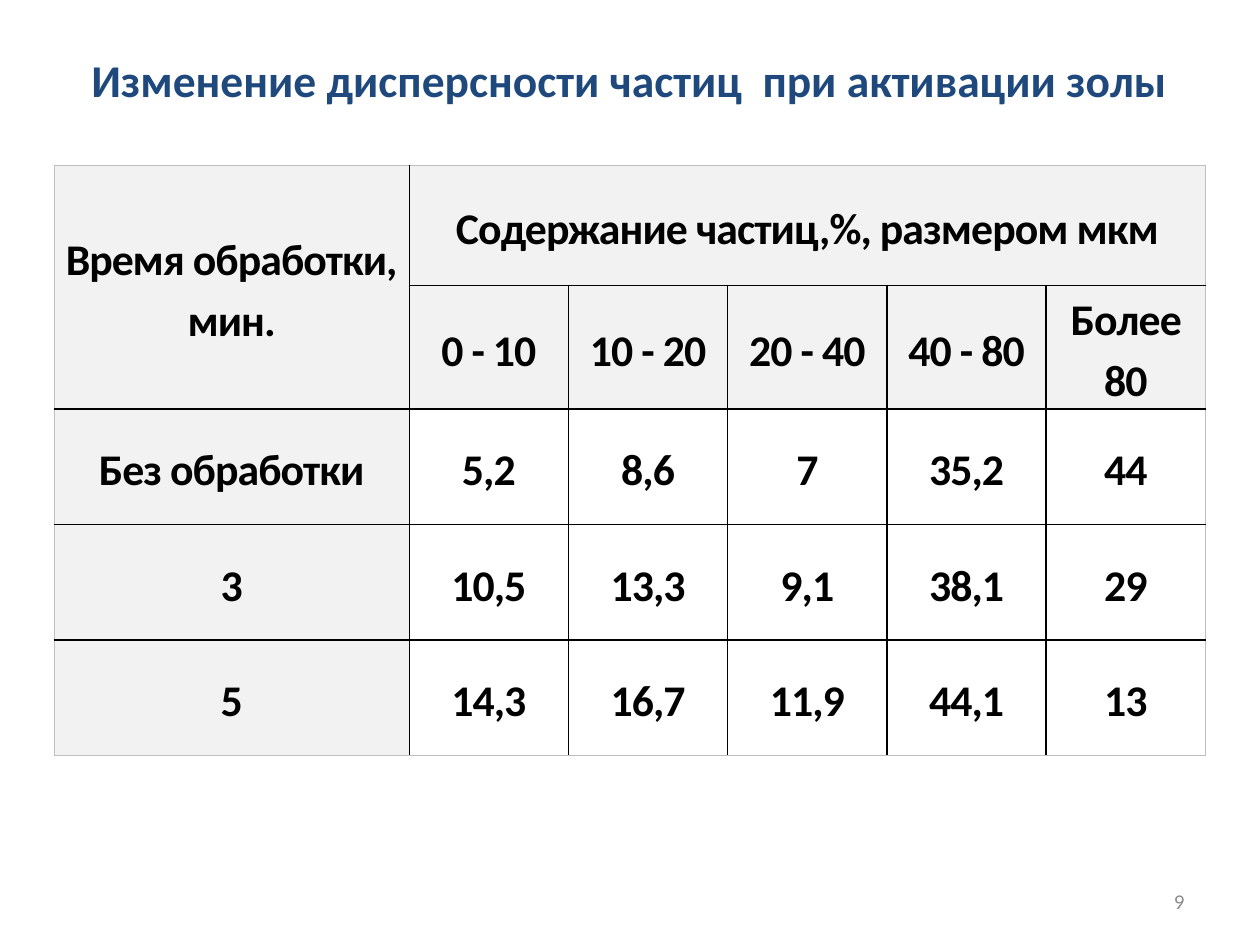
import pptx
import pptx.dml.color
import pptx.enum.text
import pptx.oxml
import pptx.oxml.ns
import pptx.util
from pptx.util import Cm

ALIGN = pptx.enum.text.PP_ALIGN
MIDDLE = pptx.enum.text.MSO_ANCHOR.MIDDLE


def colour(value):
    return pptx.dml.color.RGBColor.from_string(value)


def format_text(frame, size, hex_colour, bold, align):
    for para in frame.paragraphs:
        para.alignment = align
        for span in para.runs:
            span.font.name = "Calibri"
            span.font.size = pptx.util.Pt(size)
            span.font.bold = bold
            span.font.color.rgb = colour(hex_colour)


deck = pptx.Presentation()
deck.slide_width, deck.slide_height = Cm(25.4), Cm(19.05)
page = deck.slides.add_slide(deck.slide_layouts[5])

# Title
title = page.shapes.title
title.left, title.top, title.width, title.height = Cm(1.4), Cm(0.91), Cm(22.6), Cm(1.37)
title.text_frame.text = "Изменение дисперсности частиц  при активации золы"
title.text_frame.vertical_anchor = MIDDLE
format_text(title.text_frame, 26, "1F497D", True, ALIGN.CENTER)

# Table grid
rows = [
    ["Время обработки,\nмин.", "Содержание частиц,%, размером мкм", "", "", "", ""],
    ["", "0 - 10", "10 - 20", "20 - 40", "40 - 80", "Более 80"],
    ["Без обработки", "5,2", "8,6", "7", "35,2", "44"],
    ["3", "10,5", "13,3", "9,1", "38,1", "29"],
    ["5", "14,3", "16,7", "11,9", "44,1", "13"],
]
widths = [7.16] + [3.21] * 5
heights = [2.43, 2.48] + [2.33] * 3
table = page.shapes.add_table(
    len(rows), len(widths), Cm(1.09), Cm(3.33), Cm(sum(widths)), Cm(sum(heights))
).table
table.first_row = table.horz_banding = False
for column, width in zip(table.columns, widths):
    column.width = Cm(width)
for row, height in zip(table.rows, heights):
    row.height = Cm(height)
table.cell(0, 0).merge(table.cell(1, 0))
table.cell(0, 1).merge(table.cell(0, 5))

# Table cells: grey headings, black inner lines, light outer frame
for r, texts in enumerate(rows):
    for c, text in enumerate(texts):
        cell = table.cell(r, c)
        if text:
            cell.text_frame.text = text
        cell.vertical_anchor = MIDDLE
        cell.margin_left = cell.margin_right = Cm(0.2)
        cell.margin_top = cell.margin_bottom = Cm(0)
        format_text(cell.text_frame, 25, "000000", True, ALIGN.CENTER)
        for para in cell.text_frame.paragraphs:
            para.line_spacing = 1.15
            for span in para.runs:
                span.font._element.set("spc", "-50")
        if r < 2 or c == 0:
            cell.fill.solid()
            cell.fill.fore_color.rgb = colour("F2F2F2")
        else:
            cell.fill.background()
        outer = {"lnL": c == 0, "lnR": c == len(widths) - 1,
                 "lnT": r == 0, "lnB": r == len(rows) - 1}
        if (r, c) == (0, 1):
            outer["lnR"] = True
        if (r, c) == (0, 0):
            outer["lnB"] = False
        properties = cell._tc.get_or_add_tcPr()
        for place, (side, is_outer) in enumerate(outer.items()):
            line_width, line_colour = (6350, "BFBFBF") if is_outer else (12700, "000000")
            properties.insert(place, pptx.oxml.parse_xml(
                f'<a:{side} {pptx.oxml.ns.nsdecls("a")} w="{line_width}"><a:solidFill>'
                f'<a:srgbClr val="{line_colour}"/></a:solidFill></a:{side}>'))

# Page number
number = page.shapes.add_textbox(Cm(18.2), Cm(17.66), Cm(5.93), Cm(1.01))
number.text_frame.word_wrap = True
number.text_frame.vertical_anchor = MIDDLE
number.text_frame.text = "9"
format_text(number.text_frame, 12, "8C8C8C", False, ALIGN.RIGHT)

deck.save("out.pptx")
